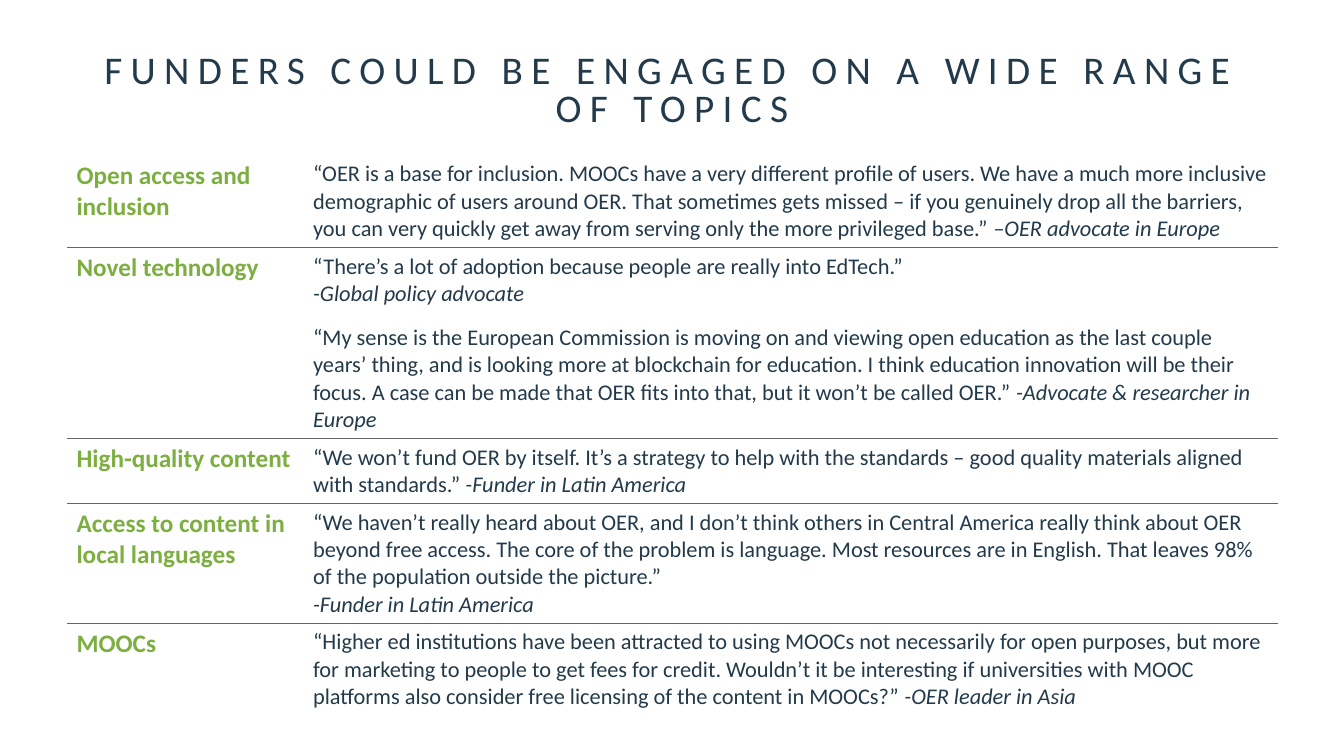
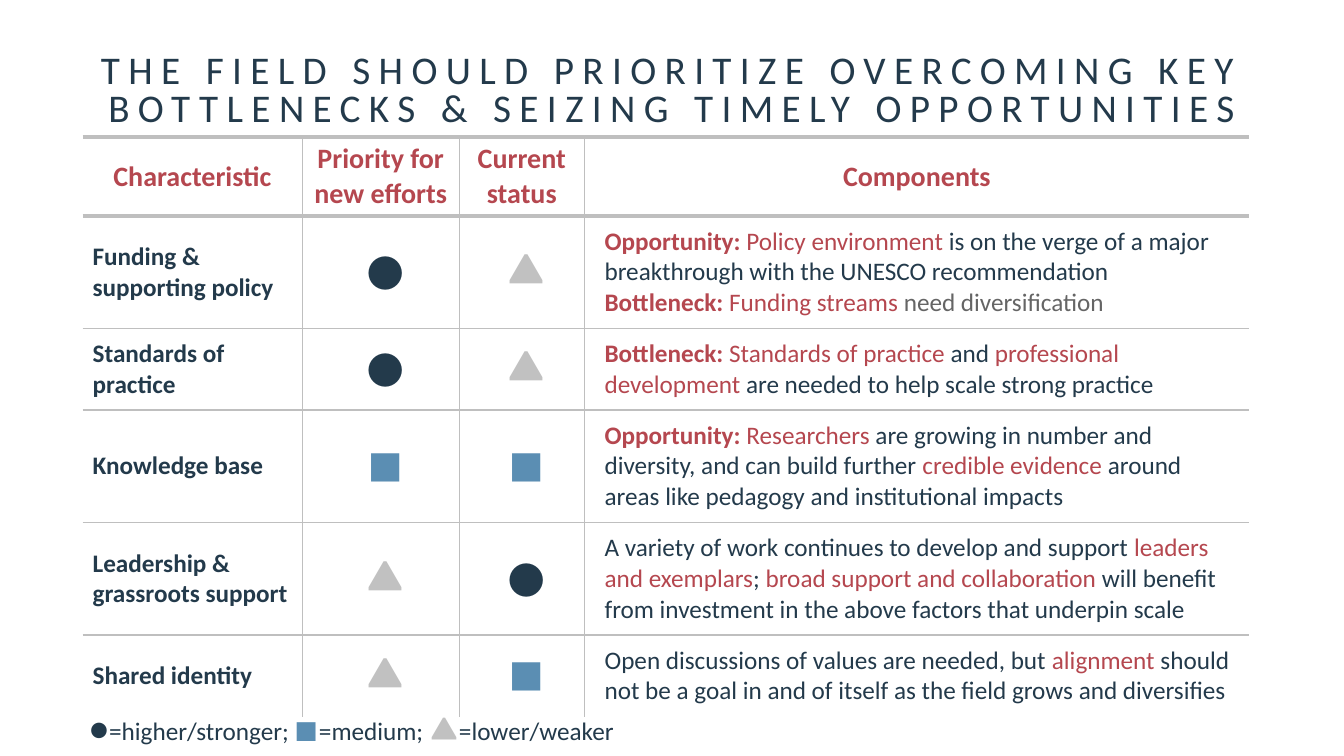
import dataclasses
import lxml.etree
import pptx
import pptx.dml.color
import pptx.enum.text
import pptx.oxml.ns
import pptx.slide
import pptx.util

Pt = pptx.util.Pt
Align = pptx.enum.text.PP_ALIGN
Anchor = pptx.enum.text.MSO_ANCHOR

NAVY = "233A4B"
GREEN = "7CAE40"
RED = "B5474F"
BLUE = "5B8EB3"
GRAY = "656565"
SILVER = "BFBFBF"
PALE = "C1C1C1"

SANS = "Calibri"
ROUND = "TeX Gyre Adventor"

BASE = {"name": SANS, "size": 18, "bold": False, "italic": False, "color": NAVY}
TITLE = BASE | {"size": 28}
TOPIC = BASE | {"bold": True, "color": GREEN}
QUOTE = BASE | {"size": 16}
VOICE = QUOTE | {"italic": True}
HEAD = BASE | {"size": 20, "bold": True, "color": RED}
NAME = BASE | {"bold": True}
KEY = BASE | {"color": RED}
LEAD = KEY | {"bold": True}
MUTED = BASE | {"color": GRAY}
MARK = BASE | {"name": ROUND}
HIGH = MARK | {"size": 40}
MID = MARK | {"size": 36, "color": BLUE}
LOW = MARK | {"size": 32, "color": PALE}

SIGNS = {"high": ("●", HIGH), "mid": ("■", MID), "low": ("▲", LOW)}
PAD = {"margin_left": 14.4, "margin_top": 7.2, "margin_right": 7.2, "margin_bottom": 7.2}
THIN = {"margin_left": 7.2, "margin_top": 3.6, "margin_right": 7.2, "margin_bottom": 3.6}
FLUSH = dict.fromkeys(PAD, 0)


@dataclasses.dataclass
class Line:
    runs: list[tuple[str, dict]]
    gap: float = 0


@dataclasses.dataclass
class Cell:
    lines: list[Line]
    align: Align = Align.LEFT
    pad: dict = dataclasses.field(default_factory=lambda: THIN)


@dataclasses.dataclass
class Grid:
    left: float
    top: float
    cols: list[float]
    rows: list[float]
    cells: list[list[Cell]]
    tone: str
    rules: list[float]
    split: float
    anchor: Anchor


def hue(code: str) -> pptx.dml.color.RGBColor:
    return pptx.dml.color.RGBColor.from_string(code)


def style(font, form: dict) -> None:
    for key, value in form.items():
        if key == "color":
            font.color.rgb = hue(value)
        else:
            setattr(font, key, Pt(value) if key == "size" else value)


def inset(target, pad: dict) -> None:
    for key, value in pad.items():
        setattr(target, key, Pt(value))


def write(frame, lines: list[Line], align: Align = Align.LEFT) -> None:
    for index, line in enumerate(lines):
        para = frame.add_paragraph() if index else frame.paragraphs[0]
        para.alignment = align
        if line.gap:
            para.space_before = Pt(line.gap)
        for text, form in line.runs:
            run = para.add_run()
            run.text = text
            style(run.font, form)


def edge(cell, side: str, width: float, tone: str) -> None:
    qn = pptx.oxml.ns.qn
    sub = lxml.etree.SubElement
    line = sub(cell._tc.get_or_add_tcPr(), qn(f"a:ln{side}"), w=str(int(Pt(width))))
    if width:
        fill = sub(line, qn("a:solidFill"))
        sub(fill, qn("a:srgbClr"), val=tone)
    else:
        sub(line, qn("a:noFill"))


def draw(slide: pptx.slide.Slide, grid: Grid) -> None:
    table = slide.shapes.add_table(
        len(grid.rows), len(grid.cols), Pt(grid.left), Pt(grid.top),
        Pt(sum(grid.cols)), Pt(sum(grid.rows))).table
    table.first_row = table.horz_banding = False
    for col, width in zip(table.columns, grid.cols):
        col.width = Pt(width)
    for row, height in zip(table.rows, grid.rows):
        row.height = Pt(height)
    last = len(grid.cols) - 1
    for r, items in enumerate(grid.cells):
        for c, item in enumerate(items):
            cell = table.cell(r, c)
            widths = {
                "L": grid.split if c else 0,
                "R": grid.split if c < last else 0,
                "T": grid.rules[r],
                "B": grid.rules[r + 1],
            }
            for side, width in widths.items():
                edge(cell, side, width, grid.tone)
            cell.fill.background()
            cell.vertical_anchor = grid.anchor
            inset(cell, item.pad)
            write(cell.text_frame, item.lines, item.align)


def start(deck, text: str, left: float, width: float) -> pptx.slide.Slide:
    slide = deck.slides.add_slide(deck.slide_layouts[5])
    title = slide.shapes.title
    title.left, title.top, title.width, title.height = map(Pt, (left, 39, width, 72))
    frame = title.text_frame
    frame.auto_size = pptx.enum.text.MSO_AUTO_SIZE.NONE
    frame.vertical_anchor = Anchor.TOP
    frame.word_wrap = True
    inset(frame, FLUSH)
    write(frame, [Line([(text, TITLE)])], Align.CENTER)
    para = frame.paragraphs[0]
    para.line_spacing = 0.8
    para.runs[0]._r.get_or_add_rPr().set("spc", "600")
    return slide


def plain(text: str, form: dict, align: Align = Align.LEFT) -> Cell:
    return Cell([Line([(text, form)])], align)


def sign(level: str) -> Cell:
    return Cell([Line([SIGNS[level]])], Align.CENTER, PAD)


TOPICS = [
    ("Open access and inclusion", [Line([
        ("“OER is a base for inclusion. MOOCs have a very different profile of users. We have a much more "
         "inclusive demographic of users around OER. That sometimes gets missed – if you genuinely drop all "
         "the barriers, you can very quickly get away from serving only the more privileged base.” ", QUOTE),
        ("–OER advocate in Europe", VOICE)])]),
    ("Novel technology", [
        Line([("“There’s a lot of adoption because people are really into EdTech.”", QUOTE)]),
        Line([("-Global policy advocate", VOICE)]),
        Line([
            ("“My sense is the European Commission is moving on and viewing open education as the last couple "
             "years’ thing, and is looking more at blockchain for education. I think education innovation will "
             "be their focus. A case can be made that OER fits into that, but it won’t be called OER.” ", QUOTE),
            ("-Advocate & researcher in Europe", VOICE)], 12)]),
    ("High-quality content", [Line([
        ("“We won’t fund OER by itself. It’s a strategy to help with the standards – good quality materials "
         "aligned with standards.” ", QUOTE),
        ("-Funder in Latin America", VOICE)])]),
    ("Access to content in local languages", [
        Line([("“We haven’t really heard about OER, and I don’t think others in Central America really think "
               "about OER beyond free access. The core of the problem is language. Most resources are in "
               "English. That leaves 98% of the population outside the picture.”", QUOTE)]),
        Line([("-Funder in Latin America", VOICE)])]),
    ("MOOCs", [Line([
        ("“Higher ed institutions have been attracted to using MOOCs not necessarily for open purposes, but "
         "more for marketing to people to get fees for credit. Wouldn’t it be interesting if universities "
         "with MOOC platforms also consider free licensing of the content in MOOCs?” ", QUOTE),
        ("-OER leader in Asia", VOICE)])]),
]

HEADS = ["Characteristic", "Priority for new efforts", "Current status", "Components"]

TRAITS = [
    ("Funding & supporting policy", "high", "low", [
        Line([("Opportunity: ", LEAD), ("Policy environment ", KEY),
              ("is on the verge of a major breakthrough with the UNESCO recommendation", BASE)]),
        Line([("Bottleneck: ", LEAD), ("Funding streams ", KEY), ("need diversification", MUTED)])]),
    ("Standards of practice", "high", "low", [
        Line([("Bottleneck: ", LEAD), ("Standards of practice", KEY), (" and ", BASE),
              ("professional development ", KEY), ("are needed to help scale strong practice", BASE)])]),
    ("Knowledge base", "mid", "mid", [
        Line([("Opportunity: ", LEAD), ("Researchers ", KEY),
              ("are growing in number and diversity, and can build further ", BASE),
              ("credible evidence ", KEY),
              ("around areas like pedagogy and institutional impacts", BASE)])]),
    ("Leadership & grassroots support", "low", "high", [
        Line([("A variety of work continues to develop and support ", BASE),
              ("leaders and exemplars", KEY), (";", BASE),
              (" broad support and collaboration ", KEY),
              ("will benefit from investment in the above factors that underpin scale", BASE)])]),
    ("Shared identity", "low", "mid", [
        Line([("Open discussions of values are needed, but ", BASE), ("alignment ", KEY),
              ("should not be a goal in and of itself as the field grows and diversifies", BASE)])]),
]

LEGEND = [
    ("●", BASE | {"size": 24}), ("=higher/stronger; ", BASE),
    ("■", MID | {"size": 24}), ("=medium; ", BASE),
    ("▲", LOW | {"size": 24}), ("=lower/weaker", BASE),
]


def topics(deck) -> None:
    slide = start(deck, "FUNDERS COULD BE ENGAGED ON A WIDE RANGE OF TOPICS", 72, 816)
    cells = [[plain(name, TOPIC), Cell(lines)] for name, lines in TOPICS]
    draw(slide, Grid(47.5, 111, [169, 696.5], [65, 136, 46, 85, 64], cells,
                     GRAY, [0, 1, 1, 1, 1, 0], 0, Anchor.TOP))


def traits(deck) -> None:
    slide = start(
        deck, "THE FIELD SHOULD PRIORITIZE OVERCOMING KEY BOTTLENECKS & SEIZING TIMELY OPPORTUNITIES",
        63.5, 833)
    cells = [[plain(text, HEAD, Align.CENTER) for text in HEADS]]
    cells += [[plain(name, NAME), sign(need), sign(now), Cell(lines, pad=PAD)]
              for name, need, now, lines in TRAITS]
    draw(slide, Grid(59, 98, [157, 112, 89.5, 475], [55, 80, 58, 80, 80, 58], cells,
                     SILVER, [3, 3, 1, 1, 1, 1, 0], 1, Anchor.MIDDLE))
    frame = slide.shapes.add_textbox(Pt(63.5), Pt(505), Pt(459), Pt(29)).text_frame
    frame.word_wrap = True
    inset(frame, FLUSH)
    write(frame, [Line(LEGEND)])


def main() -> None:
    deck = pptx.Presentation()
    deck.slide_width, deck.slide_height = Pt(960), Pt(540)
    topics(deck)
    traits(deck)
    deck.save("out.pptx")


if __name__ == "__main__":
    main()
